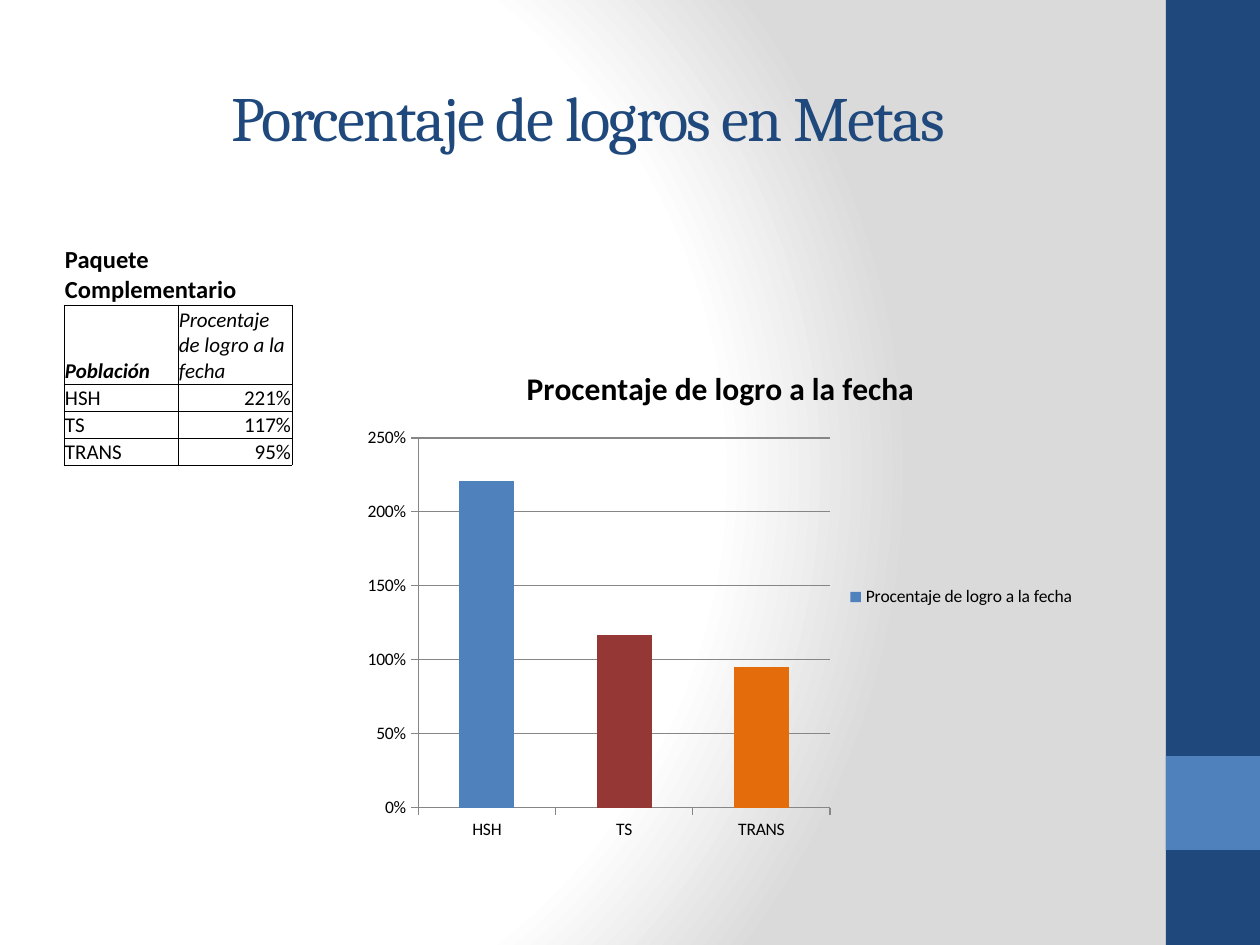
from dataclasses import dataclass

from lxml.etree import SubElement
from pptx import Presentation
from pptx.chart.data import CategoryChartData
from pptx.dml.color import RGBColor
from pptx.enum.chart import XL_CHART_TYPE, XL_LEGEND_POSITION, XL_TICK_MARK
from pptx.enum.shapes import MSO_SHAPE
from pptx.enum.text import MSO_ANCHOR, PP_ALIGN
from pptx.oxml.ns import qn
from pptx.util import Emu, Pt

PX_PER_INCH = 126
NAVY, BLUE, RED, ORANGE = "1F497D", "4F81BD", "953735", "E46C0A"
BLACK, GRID = "000000", "868686"
MEASURE = "Procentaje de logro a la fecha"
POPULATIONS = {"HSH": 2.21, "TS": 1.17, "TRANS": 0.95}


@dataclass
class Box:
    left: int
    top: int
    width: int
    height: int

    def emu(self) -> list[Emu]:
        return [px(n) for n in (self.left, self.top, self.width, self.height)]


@dataclass
class CellText:
    text: str
    size: int = 12
    bold: bool = False
    italic: bool = False
    align: PP_ALIGN = PP_ALIGN.LEFT
    borders: str = "LRTB"


def px(length: int) -> Emu:
    return Emu(round(length * 914400 / PX_PER_INCH))


def color(value: str) -> RGBColor:
    return RGBColor.from_string(value)


def add_run(paragraph, text: str, size: int, font: str, value: str):
    run = paragraph.add_run()
    run.text = text
    run.font.size, run.font.name = Pt(size), font
    run.font.color.rgb = color(value)
    return run


def set_background(slide) -> None:
    slide.background.fill.gradient()
    gradient = slide.element.find(".//" + qn("a:gradFill"))
    for child in list(gradient):
        gradient.remove(child)
    stops = SubElement(gradient, qn("a:gsLst"))
    for position, value in ((0, "FFFFFF"), (75, "FFFFFF"), (100, "DADADA")):
        stop = SubElement(stops, qn("a:gs"), pos=str(position * 1000))
        SubElement(stop, qn("a:srgbClr"), val=value)
    circle = SubElement(gradient, qn("a:path"), path="circle")
    SubElement(circle, qn("a:fillToRect"), l="20000", t="50000", r="100000", b="50000")


def add_band(slide, box: Box, fill: str) -> None:
    shape = slide.shapes.add_shape(MSO_SHAPE.RECTANGLE, *box.emu())
    shape.shadow.inherit = False
    shape.fill.solid()
    shape.fill.fore_color.rgb = color(fill)
    shape.line.fill.background()


def add_title(slide, box: Box, text: str) -> None:
    frame = slide.shapes.add_textbox(*box.emu()).text_frame
    frame.word_wrap = True
    frame.vertical_anchor = MSO_ANCHOR.MIDDLE
    paragraph = frame.paragraphs[0]
    paragraph.alignment = PP_ALIGN.CENTER
    run = add_run(paragraph, text, 36, "Cambria", NAVY)
    run.font._element.set("spc", "-100")


def fill_cell(cell, content: CellText) -> None:
    cell.margin_left = cell.margin_right = cell.margin_top = px(1)
    cell.margin_bottom = 0
    cell.vertical_anchor = MSO_ANCHOR.BOTTOM
    properties = cell._tc.get_or_add_tcPr()
    for side in "LRTB":
        line = SubElement(properties, qn(f"a:ln{side}"), w=str(Pt(0.5)))
        if side in content.borders:
            solid = SubElement(line, qn("a:solidFill"))
            SubElement(solid, qn("a:srgbClr"), val=BLACK)
        else:
            SubElement(line, qn("a:noFill"))
    cell.fill.background()
    if content.text:
        paragraph = cell.text_frame.paragraphs[0]
        paragraph.alignment = content.align
        run = add_run(paragraph, content.text, content.size, "Calibri", BLACK)
        run.font.bold, run.font.italic = content.bold, content.italic


def add_goal_table(slide, box: Box, row_heights: list[int]) -> None:
    rows = [
        [CellText("Paquete Complementario", 14, bold=True, borders="B"),
         CellText("", borders="B")],
        [CellText("Población", bold=True, italic=True), CellText(MEASURE, italic=True)],
    ]
    rows += [[CellText(name), CellText(f"{value:.0%}", align=PP_ALIGN.RIGHT)]
             for name, value in POPULATIONS.items()]
    table = slide.shapes.add_table(len(rows), 2, *box.emu()).table
    table.first_row = table.horz_banding = False
    for column in table.columns:
        column.width = px(box.width // 2)
    for row, height, contents in zip(table.rows, row_heights, rows):
        row.height = px(height)
        for cell, content in zip(row.cells, contents):
            fill_cell(cell, content)
    table.cell(0, 0).merge(table.cell(0, 1))


def add_goal_chart(slide, box: Box) -> None:
    data = CategoryChartData(number_format="0%")
    data.categories = list(POPULATIONS)
    data.add_series(MEASURE, list(POPULATIONS.values()))
    chart = slide.shapes.add_chart(XL_CHART_TYPE.COLUMN_STACKED, *box.emu(), data).chart
    chart.font.size, chart.font.name = Pt(10), "Calibri"
    chart.font.color.rgb = color(BLACK)

    # Title and legend
    chart.has_title = True
    title = add_run(chart.chart_title.text_frame.paragraphs[0], MEASURE, 18, "Calibri", BLACK)
    title.font.bold = True
    chart.chart_title.include_in_layout = False
    chart.has_legend = True
    chart.legend.position = XL_LEGEND_POSITION.RIGHT
    chart.legend.include_in_layout = False

    # Axes
    value_axis = chart.value_axis
    value_axis.minimum_scale, value_axis.maximum_scale, value_axis.major_unit = 0, 2.5, 0.5
    value_axis.has_major_gridlines = True
    value_axis.tick_labels.number_format = "0%"
    value_axis.tick_labels.number_format_is_linked = False
    for axis in (value_axis, chart.category_axis):
        axis.major_tick_mark = XL_TICK_MARK.OUTSIDE
        axis.format.line.color.rgb = color(GRID)
        axis.format.line.width = Pt(0.75)
    grid_line = value_axis.major_gridlines.format.line
    grid_line.color.rgb = color(GRID)
    grid_line.width = Pt(0.75)

    # Columns
    plot = chart.plots[0]
    plot.gap_width, plot.overlap, plot.vary_by_categories = 150, 100, False
    series = plot.series[0]
    fills = [series.format.fill] + [series.points[i].format.fill for i in (1, 2)]
    for fill, value in zip(fills, (BLUE, RED, ORANGE)):
        fill.solid()
        fill.fore_color.rgb = color(value)


def main() -> None:
    presentation = Presentation()
    presentation.slide_width, presentation.slide_height = px(1260), px(945)
    slide = presentation.slides.add_slide(presentation.slide_layouts[6])

    # Background and side band
    set_background(slide)
    add_band(slide, Box(1166, 0, 94, 945), NAVY)
    add_band(slide, Box(1166, 756, 94, 94), BLUE)

    # Content
    add_title(slide, Box(63, 38, 1050, 157), "Porcentaje de logros en Metas")
    add_goal_table(slide, Box(64, 244, 228, 221), [61, 79, 27, 27, 27])
    add_goal_chart(slide, Box(353, 344, 735, 506))
    presentation.save("out.pptx")


if __name__ == "__main__":
    main()
